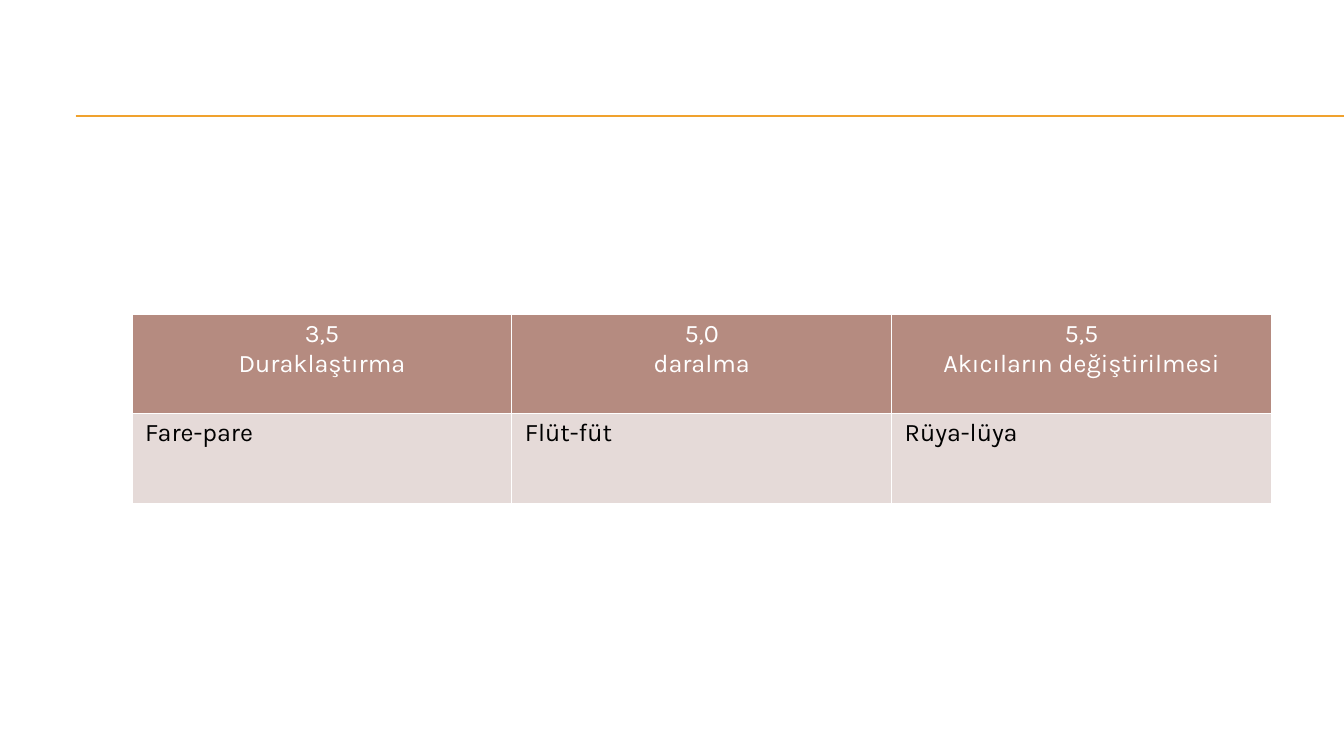
from lxml import etree
from pptx import Presentation
from pptx import util as u
from pptx.dml.color import RGBColor
from pptx.enum import shapes, text
from pptx.oxml.ns import qn

# Content: each cell is a list of paragraphs
ROWS = [
    [["3,5", "Duraklaştırma"], ["5,0", "daralma"], ["5,5", "Akıcıların değiştirilmesi"]],
    [["Fare-pare"], ["Flüt-füt"], ["Rüya-lüya"]],
]
ROW_HEIGHTS = [0.98, 0.9]
RULE_HEIGHTS = [1.15, 1.16]

FONT = "Karla"
WHITE = RGBColor(0xFF, 0xFF, 0xFF)
BLACK = RGBColor(0x00, 0x00, 0x00)
GOLD = RGBColor(0xF0, 0xA2, 0x2E)
ROSE = RGBColor(0xB5, 0x8B, 0x80)
PALE_ROSE = RGBColor(0xE5, 0xDA, 0xD8)
# Fill, font colour and alignment of each row
ROW_STYLES = [
    (ROSE, WHITE, text.PP_ALIGN.CENTER),
    (PALE_ROSE, BLACK, text.PP_ALIGN.LEFT),
]

SLIDE_WIDTH, SLIDE_HEIGHT = 13.33, 7.5
TABLE_LEFT, TABLE_TOP, TABLE_WIDTH = 1.31, 3.12, 11.3


def add_rule(slide, top):
    rule = slide.shapes.add_connector(
        shapes.MSO_CONNECTOR.STRAIGHT,
        u.Inches(0.75), u.Inches(top), u.Inches(SLIDE_WIDTH), u.Inches(top))
    rule.line.color.rgb = GOLD
    rule.line.width = u.Pt(0.75)
    etree.SubElement(rule._element.spPr, qn("a:effectLst"))


def add_borders(cell, color, width):
    properties = cell._tc.get_or_add_tcPr()
    for position, side in enumerate(("lnL", "lnR", "lnT", "lnB")):
        border = etree.Element(qn(f"a:{side}"), w=str(u.Pt(width)))
        fill = etree.SubElement(border, qn("a:solidFill"))
        etree.SubElement(fill, qn("a:srgbClr"), val=str(color))
        properties.insert(position, border)


def fill_cell(cell, lines, fill, color, alignment):
    cell.fill.solid()
    cell.fill.fore_color.rgb = fill
    add_borders(cell, WHITE, 1)
    cell.margin_left = cell.margin_right = u.Inches(0.13)
    cell.margin_top = cell.margin_bottom = u.Inches(0.05)
    frame = cell.text_frame
    for index, line in enumerate(lines):
        paragraph = frame.add_paragraph() if index else frame.paragraphs[0]
        paragraph.alignment = alignment
        run = paragraph.add_run()
        run.text = line
        run.font.name = FONT
        run.font.size = u.Pt(18)
        run.font.bold = False
        run.font.color.rgb = color


def add_sound_table(slide):
    table = slide.shapes.add_table(
        len(ROWS), len(ROWS[0]), u.Inches(TABLE_LEFT), u.Inches(TABLE_TOP),
        u.Inches(TABLE_WIDTH), u.Inches(sum(ROW_HEIGHTS))).table
    for row, height in zip(table.rows, ROW_HEIGHTS):
        row.height = u.Inches(height)
    for row, contents, style in zip(table.rows, ROWS, ROW_STYLES):
        for cell, lines in zip(row.cells, contents):
            fill_cell(cell, lines, *style)


def main():
    presentation = Presentation()
    presentation.slide_width = u.Inches(SLIDE_WIDTH)
    presentation.slide_height = u.Inches(SLIDE_HEIGHT)
    slide = presentation.slides.add_slide(presentation.slide_layouts[6])

    # Rules across the top
    for top in RULE_HEIGHTS:
        add_rule(slide, top)

    # Table of sound changes by age
    add_sound_table(slide)

    presentation.save("out.pptx")


if __name__ == "__main__":
    main()
